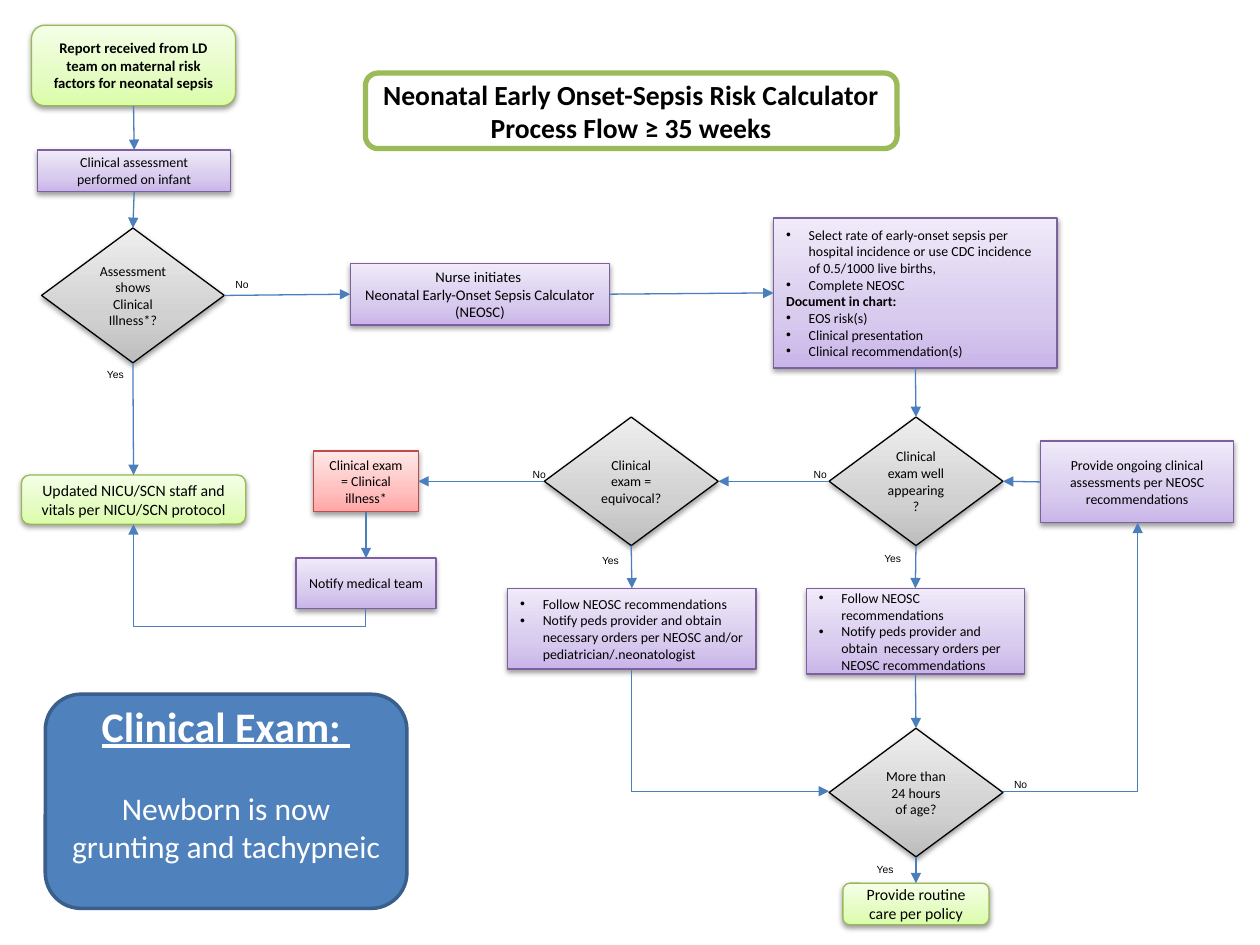
from copy import deepcopy
from dataclasses import dataclass

from pptx import Presentation
from pptx.dml.color import RGBColor
from pptx.enum.shapes import MSO_CONNECTOR, MSO_SHAPE
from pptx.enum.text import MSO_ANCHOR, MSO_AUTO_SIZE, PP_ALIGN
from pptx.oxml.ns import qn
from pptx.util import Inches, Pt
from lxml import etree

RECT, ROUND = MSO_SHAPE.RECTANGLE, MSO_SHAPE.ROUNDED_RECTANGLE
DIAMOND, ALTERNATE = MSO_SHAPE.DIAMOND, MSO_SHAPE.FLOWCHART_ALTERNATE_PROCESS
STRAIGHT, ELBOW = MSO_CONNECTOR.STRAIGHT, MSO_CONNECTOR.ELBOW
CENTER, LEFT_ALIGN, MIDDLE = PP_ALIGN.CENTER, PP_ALIGN.LEFT, MSO_ANCHOR.MIDDLE
GROW = MSO_AUTO_SIZE.SHAPE_TO_FIT_TEXT
TOP, LEFT, BOTTOM, RIGHT = range(4)

BLACK = RGBColor(0, 0, 0)
WHITE = RGBColor(0xFF, 0xFF, 0xFF)
ARROW_BLUE = RGBColor(0x4B, 0x7E, 0xBC)
EXAM_BLUE = RGBColor(0x4F, 0x81, 0xBD)
EXAM_EDGE = RGBColor(0x3A, 0x5F, 0x8C)
TITLE_GREEN = RGBColor(0x9B, 0xBB, 0x59)


@dataclass(frozen=True)
class Look:
    """Outline preset, edge colour and gradient colours from bottom to top."""
    preset: MSO_SHAPE
    edge: RGBColor
    colors: tuple[RGBColor, RGBColor, RGBColor]


def look(preset: MSO_SHAPE, edge: str, *colors: str) -> Look:
    return Look(preset, RGBColor.from_string(edge), tuple(map(RGBColor.from_string, colors)))


STEP = look(RECT, "7D60A0", "C9B5E8", "D8CBEE", "F0EAF9")
TERMINAL = look(ROUND, "98B955", "DAFDA7", "E4FCC2", "F5FFE7")
ALERT = look(RECT, "BF4C48", "FFA6A5", "FFC0BF", "FFE7E7")
DECISION = look(DIAMOND, "000000", "BDBDBD", "D1D1D1", "EEEEEE")


@dataclass(frozen=True)
class Line:
    text: str
    size: float = 7.9
    bold: bool = False
    underline: bool = False
    bullet: bool = False
    align: PP_ALIGN = CENTER
    color: RGBColor = BLACK
    font: str = "Calibri"
    before: float = 0


@dataclass(frozen=True)
class Node:
    look: Look
    box: tuple[float, float, float, float]
    lines: tuple[Line, ...]


def bullets(*texts: str) -> tuple[Line, ...]:
    return tuple(Line(text, bullet=True, align=LEFT_ALIGN) for text in texts)


NODES = {
    "report": Node(TERMINAL, (0.25, 0.2, 1.62, 0.64), (
        Line("Report received from LD team on maternal risk factors for neonatal sepsis", 8.4, True),)),
    "assessment": Node(STEP, (0.3, 1.19, 1.53, 0.33), (Line("Clinical assessment performed on infant"),)),
    "ill": Node(DECISION, (0.33, 1.81, 1.45, 1.07), (Line("Assessment shows Clinical Illness*?"),)),
    "nurse": Node(STEP, (2.78, 2.09, 2.06, 0.49), (
        Line("Nurse initiates ", 8.4), Line("Neonatal Early-Onset Sepsis Calculator (NEOSC)", 8.4))),
    "chart": Node(STEP, (6.14, 1.73, 2.25, 1.19), (
        *bullets("Select rate of early-onset sepsis per hospital incidence or use CDC incidence "
                 "of 0.5/1000 live births,", "Complete NEOSC"),
        Line("Document in chart:", bold=True, align=LEFT_ALIGN),
        *bullets("EOS risk(s)", "Clinical presentation", "Clinical recommendation(s)"))),
    "well": Node(DECISION, (6.58, 3.31, 1.38, 1.02), (Line("Clinical exam well appearing?"),)),
    "ongoing": Node(STEP, (8.26, 3.5, 1.53, 0.65), (
        Line("Provide ongoing clinical assessments per NEOSC recommendations"),)),
    "equivocal": Node(DECISION, (4.32, 3.31, 1.38, 1.02), (Line("Clinical exam = equivocal?"),)),
    "illness": Node(ALERT, (2.49, 3.58, 0.83, 0.48), (Line("Clinical exam = Clinical illness*"),)),
    "notify": Node(STEP, (2.35, 4.43, 1.11, 0.4), (Line("Notify medical team"),)),
    "update": Node(TERMINAL, (0.17, 3.77, 1.78, 0.39), (
        Line("Updated NICU/SCN staff and vitals per NICU/SCN protocol", 9),)),
    "equivocal orders": Node(STEP, (4.03, 4.67, 1.97, 0.64), bullets(
        "Follow NEOSC recommendations",
        "Notify peds provider and obtain  necessary orders per NEOSC and/or pediatrician/.neonatologist")),
    "well orders": Node(STEP, (6.4, 4.67, 1.73, 0.68), bullets(
        "Follow NEOSC recommendations",
        "Notify peds provider and obtain  necessary orders per NEOSC recommendations")),
    "age": Node(DECISION, (6.58, 5.78, 1.38, 1.02), (Line("More than 24 hours of age?"),)),
    "routine": Node(TERMINAL, (6.69, 7.01, 1.16, 0.33), (Line("Provide routine care per policy", 9),)),
}
DOWN, ACROSS, BACK = (BOTTOM, TOP), (RIGHT, LEFT), (LEFT, RIGHT)
ARROWS = [
    ("report", "assessment", DOWN), ("assessment", "ill", DOWN), ("ill", "update", DOWN),
    ("ill", "nurse", ACROSS), ("nurse", "chart", ACROSS), ("chart", "well", DOWN),
    ("ongoing", "well", BACK), ("well", "equivocal", BACK), ("equivocal", "illness", BACK),
    ("equivocal", "equivocal orders", DOWN), ("well", "well orders", DOWN),
    ("well orders", "age", DOWN), ("age", "routine", DOWN), ("illness", "notify", DOWN),
]
ANSWERS = [
    ("No", 1.77, 2.16, 0.32), ("No", 4.13, 3.67, 0.37), ("No", 6.36, 3.67, 0.31),
    ("No", 7.95, 6.13, 0.44), ("Yes", 0.75, 2.87, 0.41), ("Yes", 6.92, 4.33, 0.35),
    ("Yes", 6.86, 6.8, 0.53), ("Yes", 4.68, 4.35, 0.46),
]


def write(frame, lines: tuple[Line, ...]) -> None:
    frame.word_wrap = True
    for index, line in enumerate(lines):
        paragraph = frame.paragraphs[0] if index == 0 else frame.add_paragraph()
        paragraph.alignment = line.align
        if line.before:
            paragraph.space_before = Pt(line.before)
        if line.bullet:
            properties = paragraph._p.get_or_add_pPr()
            properties.set("marL", str(Inches(0.18)))
            properties.set("indent", str(-Inches(0.18)))
            etree.SubElement(properties, qn("a:buFont"), typeface="Arial")
            etree.SubElement(properties, qn("a:buChar"), char="•")
        run = paragraph.add_run()
        run.text = line.text
        run.font.color.rgb = line.color
        formats = {"size": Pt(line.size), "name": line.font, "bold": line.bold, "underline": line.underline}
        for name, value in formats.items():
            setattr(run.font, name, value)


def add_panel(slide, preset, box, edge: RGBColor, width: float, lines):
    panel = slide.shapes.add_shape(preset, *map(Inches, box))
    panel.shadow.inherit = False
    panel.line.color.rgb = edge
    panel.line.width = Pt(width)
    panel.text_frame.vertical_anchor = MIDDLE
    write(panel.text_frame, lines)
    return panel


def add_node(slide, node: Node):
    shape = add_panel(slide, node.look.preset, node.box, node.look.edge, 0.75, node.lines)
    shape.fill.gradient()
    shape.fill.gradient_angle = 90
    properties = shape._element.spPr
    stops = properties.find(".//" + qn("a:gsLst"))
    stops.insert(1, deepcopy(stops[0]))
    for stop, position, color in zip(shape.fill.gradient_stops, (0, 0.35, 1), node.look.colors):
        stop.position = position
        stop.color.rgb = color
    shadow = etree.SubElement(properties.find(qn("a:effectLst")), qn("a:outerShdw"), blurRad=str(Pt(3.1)),
                              dist=str(Pt(1.6)), dir="5400000", rotWithShape="0")
    black = etree.SubElement(shadow, qn("a:srgbClr"), val="000000")
    etree.SubElement(black, qn("a:alpha"), val="38000")
    return shape


def add_arrow(slide, kind, start=(0, 0), end=(0, 0)):
    arrow = slide.shapes.add_connector(kind, *map(Inches, (*start, *end)))
    arrow.line.color.rgb = ARROW_BLUE
    arrow.line.width = Pt(0.75)
    etree.SubElement(arrow.line._get_or_add_ln(), qn("a:tailEnd"), type="triangle")
    etree.SubElement(arrow._element.spPr, qn("a:effectLst"))
    return arrow


def add_bent(slide, start, end, preset: str, turn: int = 0, bend: int | None = None) -> None:
    """Bent arrow; a quarter turn swaps its frame about the same centre and mirrors it."""
    arrow = add_arrow(slide, ELBOW, start, end)
    properties = arrow._element.spPr
    geometry = properties.find(qn("a:prstGeom"))
    geometry.set("prst", preset)
    if bend is not None:
        guides = geometry.find(qn("a:avLst"))
        etree.SubElement(guides, qn("a:gd"), name="adj1", fmla=f"val {bend}")
    if turn:
        width, height = arrow.width, arrow.height
        arrow.left += (width - height) // 2
        arrow.top += (height - width) // 2
        arrow.width, arrow.height = height, width
        frame = properties.find(qn("a:xfrm"))
        frame.attrib.pop("flipV", None)
        frame.set("flipH", "1")
        frame.set("rot", str(turn * 60000))


def main() -> None:
    deck = Presentation()
    deck.slide_width, deck.slide_height = Inches(10), Inches(7.5)
    slide = deck.slides.add_slide(deck.slide_layouts[6])
    shapes = {key: add_node(slide, node) for key, node in NODES.items()}
    for source, target, (source_side, target_side) in ARROWS:
        arrow = add_arrow(slide, STRAIGHT)
        arrow.begin_connect(shapes[source], source_side)
        arrow.end_connect(shapes[target], target_side)
    add_bent(slide, (7.96, 6.28), (9.03, 4.15), "bentConnector2")
    add_bent(slide, (5.01, 5.31), (6.58, 6.28), "bentConnector2", turn=270)
    add_bent(slide, (2.9, 4.83), (1.06, 4.16), "bentConnector3", turn=90, bend=-21000)
    for text, left, top, width in ANSWERS:
        answer = slide.shapes.add_textbox(*map(Inches, (left, top, width, 0.2)))
        write(answer.text_frame, (Line(text, 5.9, align=LEFT_ALIGN, font="Arial"),))
        answer.text_frame.auto_size = GROW
    title = add_panel(slide, ROUND, (2.9, 0.58, 4.22, 0.6), TITLE_GREEN, 3, (
        Line("Neonatal Early Onset-Sepsis Risk Calculator ", 15.8, True),
        Line("Process Flow ≥ 35 weeks", 15.8, True)))
    exam = add_panel(slide, ALTERNATE, (0.36, 5.51, 2.87, 1.7), EXAM_EDGE, 2, (
        Line("Clinical Exam: ", 24, True, True, color=WHITE),
        Line("Newborn is now grunting and tachypneic", 18, color=WHITE, before=22)))
    exam.text_frame.margin_bottom = Inches(0.35)
    for panel, color in ((title, WHITE), (exam, EXAM_BLUE)):
        panel.fill.solid()
        panel.fill.fore_color.rgb = color
    deck.save("out.pptx")


if __name__ == "__main__":
    main()
